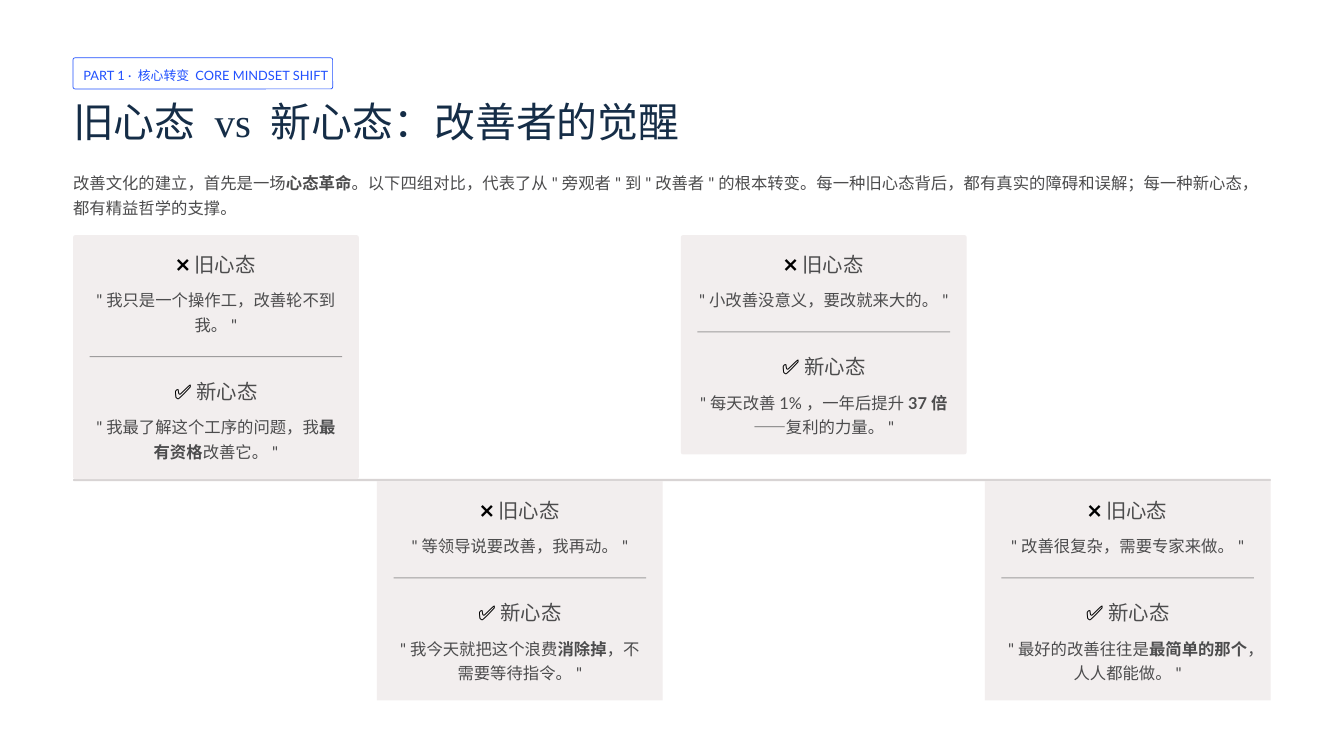
from dataclasses import dataclass

from lxml import etree
from pptx import Presentation
from pptx import util as u
from pptx.dml.color import RGBColor
from pptx.enum import shapes, text
from pptx.oxml.ns import qn

COLOURS = {
    "blue": "2150FE",
    "navy": "152D47",
    "grey": "4C4C4D",
    "black": "000000",
    "card": "F2EEEE",
    "axis": "D8D4D4",
}
RECTANGLE = shapes.MSO_SHAPE.RECTANGLE
ROUNDED = shapes.MSO_SHAPE.ROUNDED_RECTANGLE
MARGIN = 2.21
CONTENT_WIDTH = 36.22
CARD_WIDTH = 8.64
CARD_PITCH = 9.19
CARD_INSET = 0.5
QUOTE_LINE = 0.75
UPPER_TOP = 7.11
LOWER_TOP = 14.55


@dataclass(frozen=True)
class Area:
    left: float
    top: float
    width: float
    height: float


@dataclass(frozen=True)
class Style:
    font: str
    size: float
    spacing: float
    colour: str
    centred: bool = False
    wrap: bool = True


@dataclass(frozen=True)
class Span:
    text: str
    bold: bool = False
    colour: str = ""


@dataclass(frozen=True)
class Card:
    top: float
    outline: shapes.MSO_SHAPE
    old_lines: int
    old: str
    new: tuple[Span, ...]


TAG = Style("Lato", 11, 17, "blue", wrap=False)
TITLE = Style("Times New Roman", 35, 43.5, "navy", wrap=False)
INTRO = Style("Lato", 14, 21, "grey")
HEADING = Style("Times New Roman", 17.5, 21.5, "grey", centred=True, wrap=False)
QUOTE = Style("Lato", 14, 21, "grey", centred=True)

CARDS = [
    Card(UPPER_TOP, ROUNDED, 2, '"我只是一个操作工，改善轮不到我。"',
         (Span('"我最了解这个工序的问题，我'), Span("最有资格", True), Span('改善它。"'))),
    Card(LOWER_TOP, RECTANGLE, 1, '"等领导说要改善，我再动。"',
         (Span('"我今天就把这个浪费'), Span("消除掉", True), Span('，不需要等待指令。"'))),
    Card(UPPER_TOP, ROUNDED, 1, '"小改善没意义，要改就来大的。"',
         (Span('"每天改善1%，一年后提升'), Span("37倍", True), Span('——复利的力量。"'))),
    Card(LOWER_TOP, RECTANGLE, 1, '"改善很复杂，需要专家来做。"',
         (Span('"最好的改善往往是'), Span("最简单的那个", True), Span('，人人都能做。"'))),
]


def colour_of(name: str) -> RGBColor:
    return RGBColor.from_string(COLOURS[name])


def add_block(page, area: Area, outline, fill: str = "", line: str = "",
              radius: float = 0.01, opacity: int = 100) -> None:
    block = page.shapes.add_shape(
        outline, u.Cm(area.left), u.Cm(area.top), u.Cm(area.width), u.Cm(area.height))
    block.shadow.inherit = False
    if outline == ROUNDED:
        block.adjustments[0] = radius
    if fill:
        block.fill.solid()
        block.fill.fore_color.rgb = colour_of(fill)
    else:
        block.fill.background()
    if line:
        block.line.color.rgb = colour_of(line)
        block.line.width = u.Pt(0.6)
    else:
        block.line.fill.background()
    if opacity < 100:
        shade = block.fill._xPr.find(".//" + qn("a:srgbClr"))
        etree.SubElement(shade, qn("a:alpha")).set("val", str(opacity * 1000))


def add_text(page, area: Area, style: Style, *spans: Span) -> None:
    box = page.shapes.add_textbox(
        u.Cm(area.left), u.Cm(area.top), u.Cm(area.width), u.Cm(area.height))
    frame = box.text_frame
    frame.word_wrap = style.wrap
    frame.margin_left = frame.margin_right = frame.margin_top = frame.margin_bottom = 0
    frame.text = spans[0].text
    para = frame.paragraphs[0]
    para.line_spacing = u.Pt(style.spacing)
    para.alignment = text.PP_ALIGN.CENTER if style.centred else text.PP_ALIGN.LEFT
    for span in spans[1:]:
        para.add_run().text = span.text
    for run, span in zip(para.runs, spans):
        run.font.name = style.font
        run.font.size = u.Pt(style.size)
        run.font.bold = span.bold
        run.font.color.rgb = colour_of(span.colour or style.colour)


def add_mindset(page, left: float, top: float, mark: str, label: str,
                lines: int, quote: tuple[Span, ...]) -> None:
    width = CARD_WIDTH - 2 * CARD_INSET
    add_text(page, Area(left, top, width, 0.79), HEADING,
             Span(mark, colour="black"), Span(f" {label}"))
    add_text(page, Area(left, top + 1.04, width, lines * QUOTE_LINE), QUOTE, *quote)


def add_card(page, left: float, card: Card) -> None:
    inner = left + CARD_INSET
    rule_top = card.top + 2.16 + card.old_lines * QUOTE_LINE
    height = 5.88 + card.old_lines * QUOTE_LINE
    add_block(page, Area(left, card.top, CARD_WIDTH, height), card.outline, "card")
    add_mindset(page, inner, card.top + 0.49, "❌", "旧心态", card.old_lines, (Span(card.old),))
    add_block(page, Area(inner, rule_top, CARD_WIDTH - 2 * CARD_INSET, 0.03),
              RECTANGLE, "grey", opacity=50)
    add_mindset(page, inner, rule_top + 0.67, "✅", "新心态", 2, card.new)


def main() -> None:
    deck = Presentation()
    deck.slide_width, deck.slide_height = u.Cm(40.64), u.Cm(22.86)
    page = deck.slides.add_slide(deck.slide_layouts[6])

    add_block(page, Area(MARGIN, 1.75, 7.85, 0.94), ROUNDED, line="blue", radius=0.06)
    add_text(page, Area(2.52, 1.9, 7.6, 0.61), TAG,
             Span("PART 1 · 核心转变 CORE MINDSET SHIFT"))
    add_text(page, Area(MARGIN, 2.87, 19.5, 1.55), TITLE,
             Span("旧心态 vs 新心态：改善者的觉醒"))
    add_text(page, Area(MARGIN, 5.09, CONTENT_WIDTH, 1.5), INTRO,
             Span("改善文化的建立，首先是一场"),
             Span("心态革命", True),
             Span('。以下四组对比，代表了从"旁观者"到"改善者"的根本转变。'
                  "每一种旧心态背后，都有真实的障碍和误解；每一种新心态，都有精益哲学的支撑。"))
    add_block(page, Area(MARGIN, 14.48, CONTENT_WIDTH, 0.07), ROUNDED, "axis", radius=0.5)
    for column, card in enumerate(CARDS):
        add_card(page, MARGIN + column * CARD_PITCH, card)

    deck.save("out.pptx")


if __name__ == "__main__":
    main()
